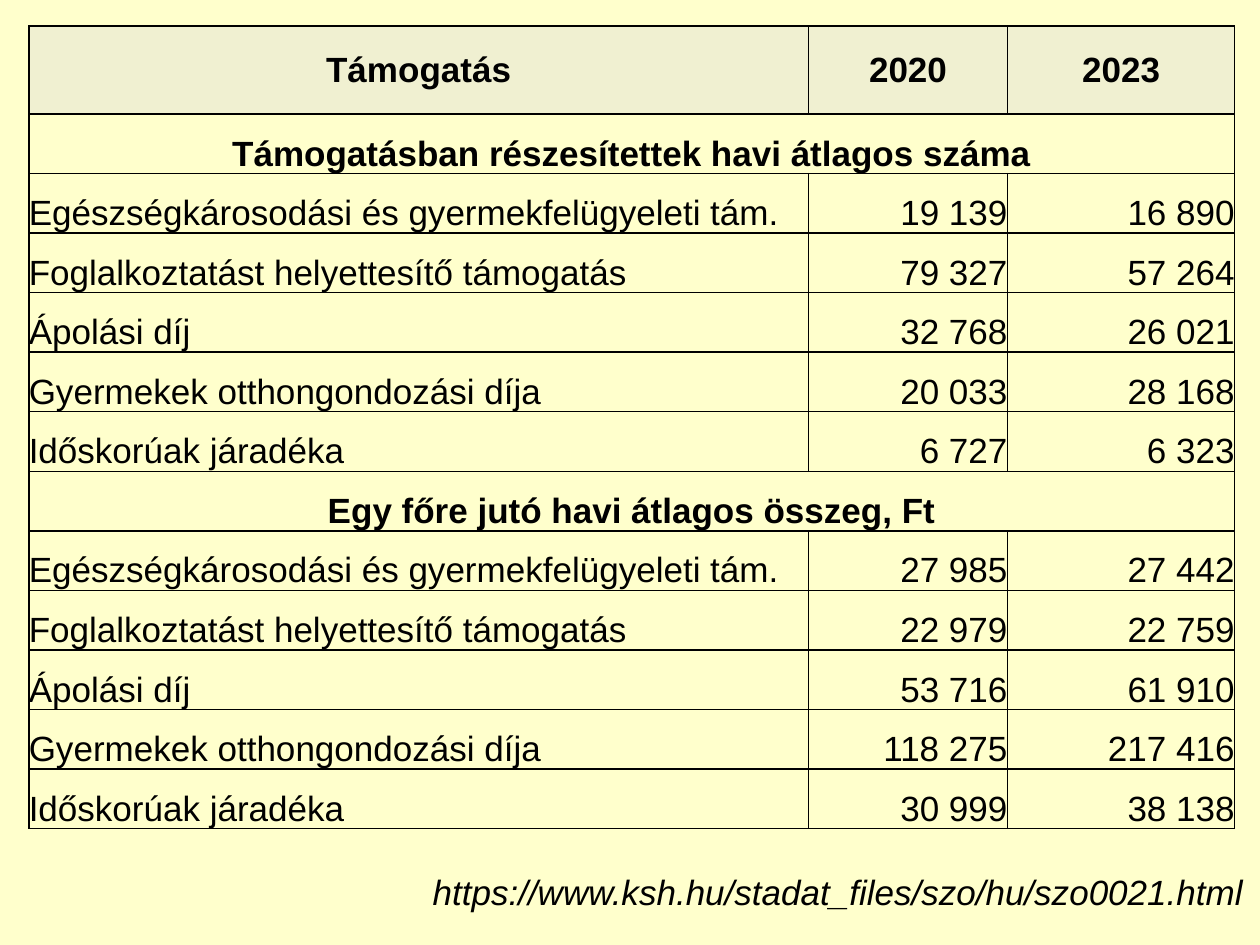
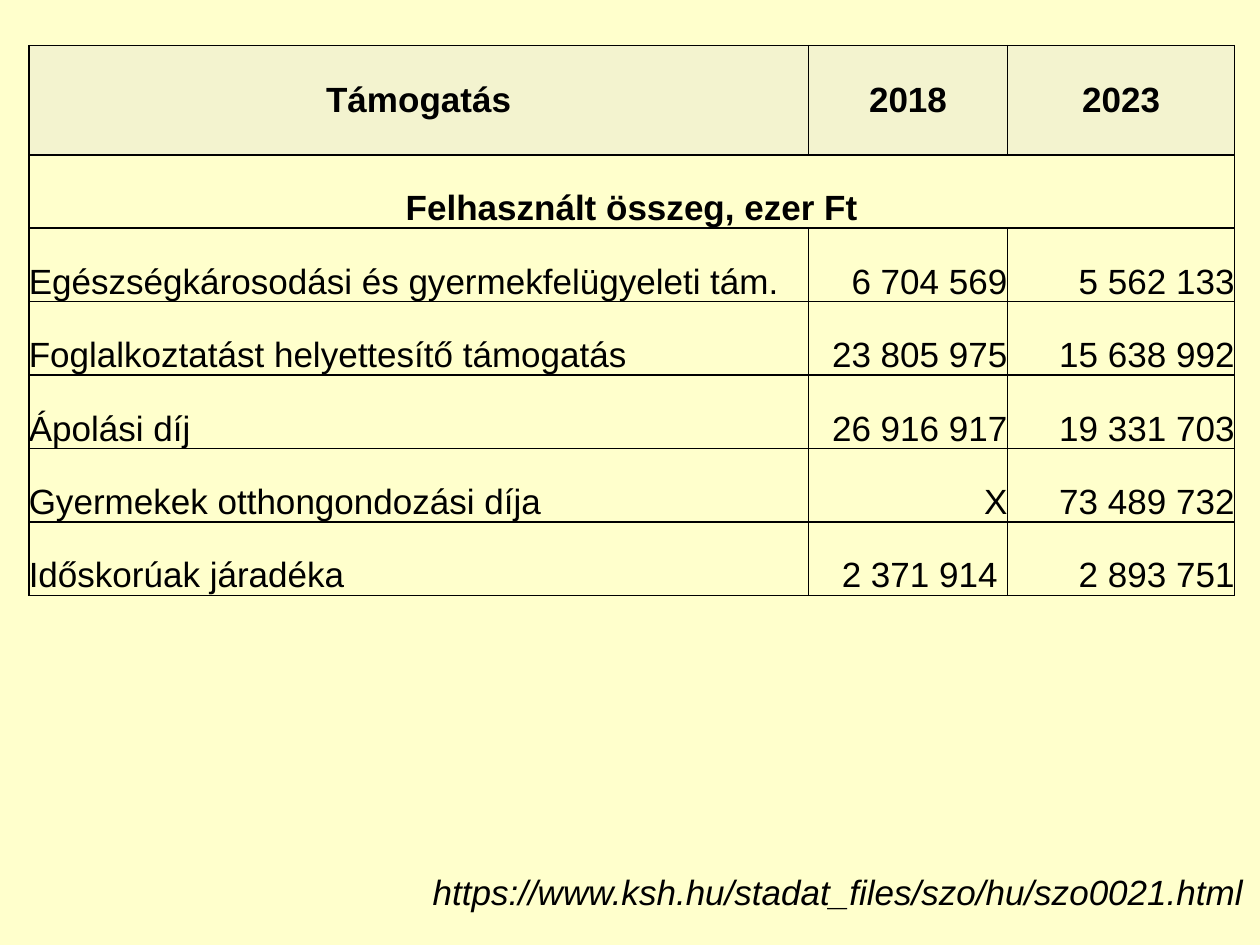
from lxml.etree import SubElement
from pptx import Presentation
from pptx.dml.color import RGBColor
from pptx.enum.text import MSO_ANCHOR, MSO_AUTO_SIZE, PP_ALIGN
from pptx.oxml import parse_xml
from pptx.oxml.ns import nsdecls, qn
from pptx.util import Cm, Pt

# Content: a one-item row is a section heading across the table
BENEFITS = [
    "Egészségkárosodási és gyermekfelügyeleti tám.",
    "Foglalkoztatást helyettesítő támogatás",
    "Ápolási díj",
    "Gyermekek otthongondozási díja",
    "Időskorúak járadéka",
]
SOURCE = "https://www.ksh.hu/stadat_files/szo/hu/szo0021.html"
SLIDES = [
    {
        "years": ("2020", "2023"),
        "top": 0.52, "header_height": 1.78, "row_height": 1.2, "header_alpha": 39,
        "sections": [
            ("Támogatásban részesítettek havi átlagos száma",
             ["19 139", "79 327", "32 768", "20 033", "6 727"],
             ["16 890", "57 264", "26 021", "28 168", "6 323"]),
            ("Egy főre jutó havi átlagos összeg, Ft",
             ["27 985", "22 979", "53 716", "118 275", "30 999"],
             ["27 442", "22 759", "61 910", "217 416", "38 138"]),
        ],
    },
    {
        "years": ("2018", "2023"),
        "top": 0.92, "header_height": 2.2, "row_height": 1.48, "header_alpha": 29,
        "sections": [
            ("Felhasznált összeg, ezer Ft",
             ["6 704 569", "23 805 975", "26 916 917", "X", "2 371 914 "],
             ["5 562 133", "15 638 992", "19 331 703", "73 489 732", "2 893 751"]),
        ],
    },
]

# Shared look
COLORS = {"background": "FFFFCC", "header": "D9D9D9", "ink": "000000"}
FONT = {"name": "Arial", "size": Pt(20)}
COL_WIDTHS = (15.72, 4.01, 4.58)
TABLE_LEFT = 0.58
NO_MARGINS = dict.fromkeys(
    ("margin_left", "margin_top", "margin_right", "margin_bottom"), 0)


def set_attrs(obj, values):
    for name, value in values.items():
        setattr(obj, name, value)


def write(tf, text, align, **style):
    p = tf.paragraphs[0]
    p.alignment = align
    r = p.add_run()
    r.text = text
    set_attrs(r.font, {**FONT, **style})
    r.font.color.rgb = RGBColor.from_string(COLORS["ink"])
    return p


def add_borders(cell):
    tcPr = cell._tc.get_or_add_tcPr()
    for i, side in enumerate(("lnL", "lnR", "lnT", "lnB")):
        tcPr.insert(i, parse_xml(
            f'<a:{side} {nsdecls("a")} w="{Pt(1)}"><a:solidFill>'
            f'<a:srgbClr val="{COLORS["ink"]}"/></a:solidFill></a:{side}>'))


def fill_header(cell, alpha):
    cell.fill.solid()
    cell.fill.fore_color.rgb = RGBColor.from_string(COLORS["header"])
    color = cell._tc.tcPr.find(qn("a:solidFill")).find(qn("a:srgbClr"))
    SubElement(color, qn("a:alpha"), val=str(alpha * 1000))


def table_rows(data):
    rows = [("Támogatás", *data["years"])]
    for heading, *columns in data["sections"]:
        rows += [(heading,), *zip(BENEFITS, *columns)]
    return rows


def add_benefit_table(s, data):
    rows = table_rows(data)
    heights = [data["header_height"]] + [data["row_height"]] * (len(rows) - 1)
    table = s.shapes.add_table(
        len(rows), len(COL_WIDTHS), Cm(TABLE_LEFT), Cm(data["top"]),
        Cm(sum(COL_WIDTHS)), Cm(sum(heights))).table
    set_attrs(table, {"first_row": False, "horz_banding": False})
    for column, width in zip(table.columns, COL_WIDTHS):
        column.width = Cm(width)

    for i, (row, height) in enumerate(zip(rows, heights)):
        table.rows[i].height = Cm(height)
        is_header, is_section = i == 0, len(row) == 1
        for j in range(len(COL_WIDTHS)):
            cell = table.cell(i, j)
            set_attrs(cell, NO_MARGINS)
            cell.vertical_anchor = MSO_ANCHOR.MIDDLE if is_header else MSO_ANCHOR.BOTTOM
            if is_header:
                fill_header(cell, data["header_alpha"])
            else:
                cell.fill.background()
            add_borders(cell)
            if j < len(row):
                if is_header or is_section:
                    align = PP_ALIGN.CENTER
                else:
                    align = PP_ALIGN.RIGHT if j else PP_ALIGN.LEFT
                write(cell.text_frame, row[j], align, bold=is_header or is_section)
        if is_section:
            table.cell(i, 0).merge(table.cell(i, len(COL_WIDTHS) - 1))


def add_source(s):
    tf = s.shapes.add_textbox(Cm(0.5), Cm(17.42), Cm(24.82), Cm(1.11)).text_frame
    set_attrs(tf, {"word_wrap": True, "auto_size": MSO_AUTO_SIZE.SHAPE_TO_FIT_TEXT})
    write(tf, SOURCE, PP_ALIGN.RIGHT, italic=True).space_after = Pt(12)


def main():
    prs = Presentation()
    set_attrs(prs, {"slide_width": Cm(25.4), "slide_height": Cm(19.05)})
    background = prs.slide_master.background.fill
    background.solid()
    background.fore_color.rgb = RGBColor.from_string(COLORS["background"])
    for data in SLIDES:
        s = prs.slides.add_slide(prs.slide_layouts[6])
        add_benefit_table(s, data)
        add_source(s)
    prs.save("out.pptx")


if __name__ == "__main__":
    main()
